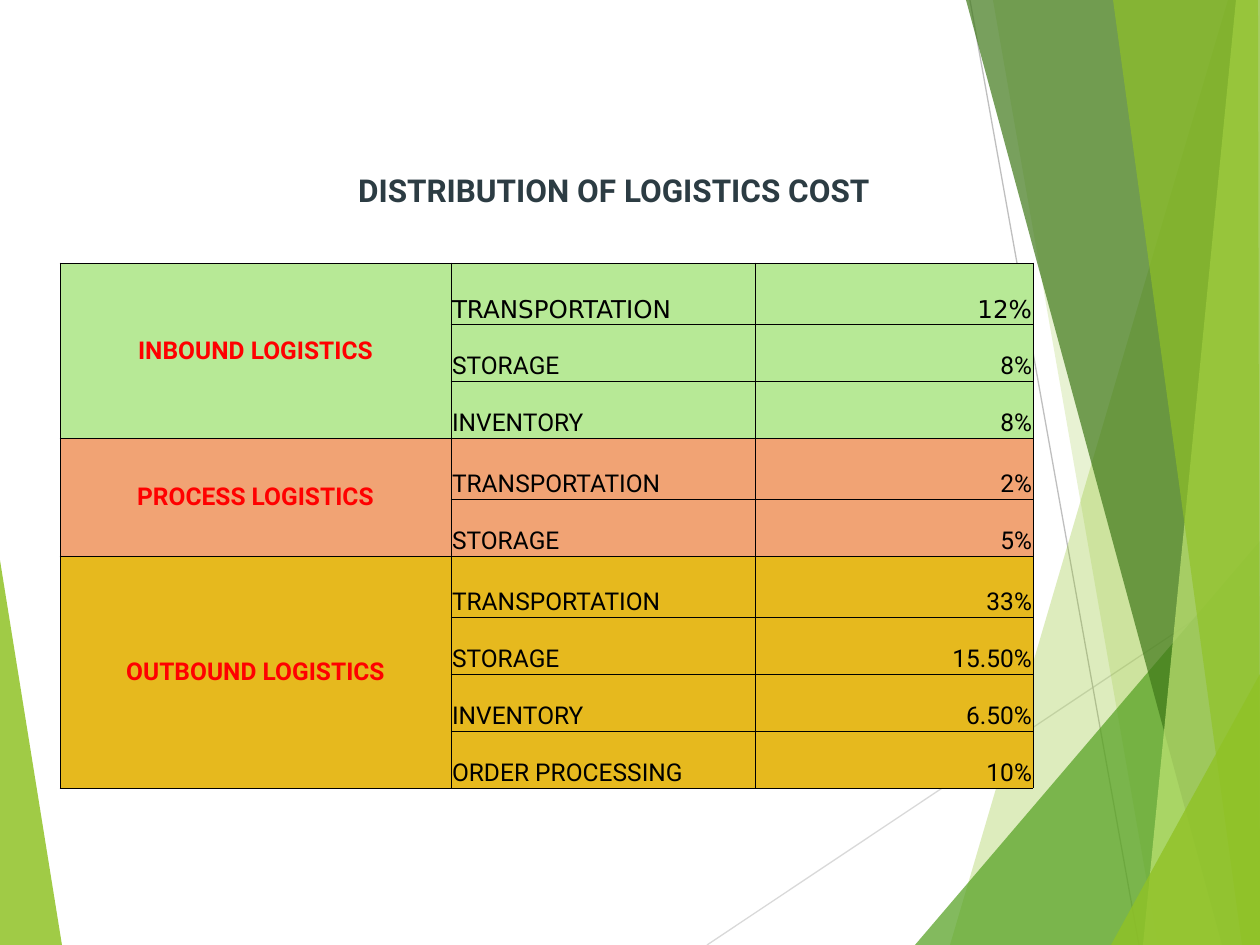
import dataclasses

import lxml.etree
import pptx
import pptx.dml.color
import pptx.enum.shapes
import pptx.enum.text
import pptx.oxml
import pptx.oxml.ns
import pptx.util

EMU_PER_PX = 914400 / 126
SLIDE_BOX = (0, 0, 1260, 945)
TITLE_BOX = (178, 168, 872, 47)
TABLE_BOX = (60, 263, 973, 526)


@dataclasses.dataclass(frozen=True)
class Theme:
    font: str = "Roboto"
    first_row_font: str = "DejaVu Sans"
    title_size: int = 18
    table_size: int = 14
    title: str = "2C3C43"
    group: str = "FF0000"
    text: str = "000000"
    border: str = "000000"
    inbound: str = "B7E996"
    process: str = "F1A374"
    outbound: str = "E6B91E"
    leaf: str = "90C226"
    green: str = "54A021"
    forest: str = "3F7819"
    lime: str = "C0E474"
    light_line: str = "D9D9D9"
    dark_line: str = "BFBFBF"


THEME = Theme()

# Start, end, colour
THIN_LINES = [
    ((707, 945), (1260, 576), THEME.light_line),
    ((970, 0), (1139, 945), THEME.dark_line),
]

# Colour, opacity in percent, corners
FACETS = [
    (THEME.leaf, 30, [(1228, 0), (950, 945), (1260, 945), (1260, 0)]),
    (THEME.leaf, 20, [(993, 0), (1158, 945), (1260, 945), (1260, 0)]),
    (THEME.green, 72, [(915, 945), (1260, 541), (1260, 945)]),
    (THEME.forest, 70, [(966, 0), (1222, 945), (1260, 945), (1260, 0)]),
    (THEME.lime, 70, [(1236, 0), (1143, 945), (1260, 945), (1260, 0)]),
    (THEME.leaf, 65, [(1113, 0), (1242, 945), (1260, 945), (1258, 0)]),
    (THEME.leaf, 80, [(1111, 945), (1260, 674), (1260, 945)]),
]
LEFT_FACET = (THEME.leaf, 85, [(0, 560), (62, 945), (0, 945)])

COST_GROUPS = [
    ("INBOUND LOGISTICS", THEME.inbound,
     [("TRANSPORTATION", "12%"), ("STORAGE", "8%"), ("INVENTORY", "8%")]),
    ("PROCESS LOGISTICS", THEME.process,
     [("TRANSPORTATION", "2%"), ("STORAGE", "5%")]),
    ("OUTBOUND LOGISTICS", THEME.outbound,
     [("TRANSPORTATION", "33%"), ("STORAGE", "15.50%"),
      ("INVENTORY", "6.50%"), ("ORDER PROCESSING", "10%")]),
]
COLUMN_WIDTHS = (391, 304, 278)
FIRST_ROW_HEIGHT, ROW_HEIGHT = 61, 57


def px(length):
    return pptx.util.Emu(round(length * EMU_PER_PX))


def rgb(colour):
    return pptx.dml.color.RGBColor.from_string(colour)


def set_font(paragraph, name, size, colour, bold=False):
    font = paragraph.font
    font.name, font.size, font.bold = name, pptx.util.Pt(size), bold
    font.color.rgb = rgb(colour)


def add_facet(slide, box, colour, opacity, corners):
    left, top = box[:2]
    points = [(left + x, top + y) for x, y in corners]
    builder = slide.shapes.build_freeform(*points[0], scale=EMU_PER_PX)
    builder.add_line_segments(points[1:], close=True)
    shape = builder.convert_to_shape()
    shape.shadow.inherit = False
    shape.line.fill.background()
    shape.fill.solid()
    shape.fill.fore_color.rgb = rgb(colour)
    colour_element = shape.fill._xPr.find(".//" + pptx.oxml.ns.qn("a:srgbClr"))
    alpha = lxml.etree.SubElement(colour_element, pptx.oxml.ns.qn("a:alpha"))
    alpha.set("val", str(opacity * 1000))


def add_thin_line(slide, box, start, end, colour):
    left, top = box[:2]
    connector = slide.shapes.add_connector(
        pptx.enum.shapes.MSO_CONNECTOR.STRAIGHT,
        px(left + start[0]), px(top + start[1]), px(left + end[0]), px(top + end[1]))
    connector.line.color.rgb = rgb(colour)
    connector.line.width = pptx.util.Pt(0.75)
    lxml.etree.SubElement(connector._element.spPr, pptx.oxml.ns.qn("a:effectLst"))


def add_backdrop(slide, box):
    add_facet(slide, box, *LEFT_FACET)
    for line in THIN_LINES:
        add_thin_line(slide, box, *line)
    for facet in FACETS:
        add_facet(slide, box, *facet)


def place_title(slide, box):
    title = slide.shapes.title
    title.left, title.top, title.width, title.height = map(px, box)
    frame = title.text_frame
    frame.text = "DISTRIBUTION OF LOGISTICS COST"
    frame.word_wrap = True
    frame.auto_size = pptx.enum.text.MSO_AUTO_SIZE.SHAPE_TO_FIT_TEXT
    frame.vertical_anchor = pptx.enum.text.MSO_ANCHOR.BOTTOM
    frame.margin_left = frame.margin_right = px(9)
    frame.margin_top = frame.margin_bottom = px(5)
    paragraph = frame.paragraphs[0]
    paragraph.alignment = pptx.enum.text.PP_ALIGN.CENTER
    paragraph.line_spacing = 0.97
    set_font(paragraph, THEME.font, THEME.title_size, THEME.title, bold=True)


def add_borders(cell):
    properties = cell._tc.get_or_add_tcPr()
    for position, side in enumerate(("lnL", "lnR", "lnT", "lnB")):
        properties.insert(position, pptx.oxml.parse_xml(
            f'<a:{side} {pptx.oxml.ns.nsdecls("a")} w="6350"><a:solidFill>'
            f'<a:srgbClr val="{THEME.border}"/></a:solidFill></a:{side}>'))


def fill_cell(cell, text, fill, alignment, anchor, font, colour, bold=False):
    cell.text = text
    cell.vertical_anchor = anchor
    cell.margin_left = cell.margin_right = cell.margin_top = px(1)
    cell.margin_bottom = 0
    cell.fill.solid()
    cell.fill.fore_color.rgb = rgb(fill)
    add_borders(cell)
    paragraph = cell.text_frame.paragraphs[0]
    paragraph.alignment = alignment
    set_font(paragraph, font, THEME.table_size, colour, bold)


def add_cost_table(slide, box):
    align, anchor = pptx.enum.text.PP_ALIGN, pptx.enum.text.MSO_ANCHOR
    row_count = sum(len(items) for _, _, items in COST_GROUPS)
    table = slide.shapes.add_table(row_count, len(COLUMN_WIDTHS), *map(px, box)).table
    table.first_row = table.horz_banding = False
    for column, width in zip(table.columns, COLUMN_WIDTHS):
        column.width = px(width)

    row = 0
    for group, fill, items in COST_GROUPS:
        first_row = row
        for index, (item, share) in enumerate(items):
            table.rows[row].height = px(ROW_HEIGHT if index else FIRST_ROW_HEIGHT)
            font = THEME.font if row else THEME.first_row_font
            fill_cell(table.cell(row, 0), "" if index else group, fill, align.CENTER,
                      anchor.MIDDLE, THEME.font, THEME.group, bold=True)
            fill_cell(table.cell(row, 1), item, fill, align.LEFT,
                      anchor.BOTTOM, font, THEME.text)
            fill_cell(table.cell(row, 2), share, fill, align.RIGHT,
                      anchor.BOTTOM, font, THEME.text)
            row += 1
        table.cell(first_row, 0).merge(table.cell(row - 1, 0))


def main():
    presentation = pptx.Presentation()
    presentation.slide_width, presentation.slide_height = map(px, SLIDE_BOX[2:])
    slide = presentation.slides.add_slide(presentation.slide_layouts.get_by_name("Title Only"))
    add_backdrop(slide, SLIDE_BOX)
    place_title(slide, TITLE_BOX)
    add_cost_table(slide, TABLE_BOX)
    presentation.save("out.pptx")


if __name__ == "__main__":
    main()
